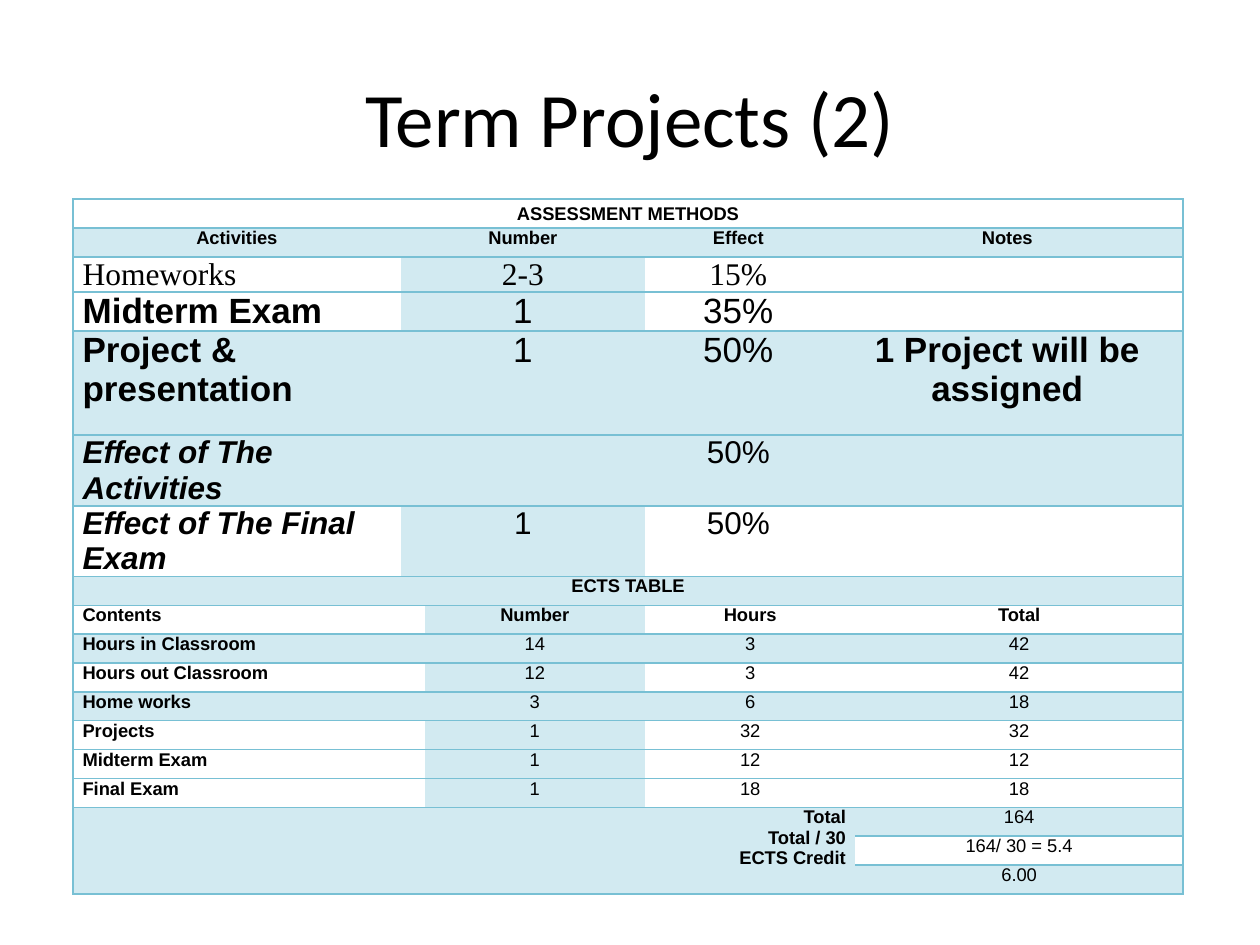
from dataclasses import dataclass
from typing import Optional

from lxml import etree
from pptx import Presentation
from pptx.dml.color import RGBColor
from pptx.enum.text import MSO_ANCHOR, PP_ALIGN
from pptx.oxml.ns import qn
from pptx.util import Pt

LEFT, MID, RIGHT = PP_ALIGN.LEFT, PP_ALIGN.CENTER, PP_ALIGN.RIGHT
TOP, CENTER = MSO_ANCHOR.TOP, MSO_ANCHOR.MIDDLE
PLAIN_STYLE = "{2D5ABB26-0587-4C30-8999-92F81FD0307C}"  # no style, no grid


@dataclass(frozen=True)
class Theme:
    ink: str = "000000"
    band: str = "D2EAF1"
    rule: str = "78C0D4"
    sans: str = "Arial"
    serif: str = "Times New Roman"
    head: str = "Calibri"
    title: float = 44
    small: float = 10.5
    mid: float = 18
    large: float = 20


THEME = Theme()


@dataclass(frozen=True)
class Look:
    size: float
    bold: bool = False
    italic: bool = False
    face: str = THEME.sans
    align: PP_ALIGN = MID


@dataclass(frozen=True)
class Row:
    grid: tuple  # first and last column of each cell
    band: bool
    texts: tuple
    lead: Look  # look of the first cell
    rest: Optional[Look] = None
    tail: Optional[Look] = None  # look of the last cell, if it differs
    deep: int = 1  # rows taken by the first cell


# Column spans
WHOLE = ((0, 5),)
UPPER = ((0, 0), (1, 2), (3, 3), (4, 5))
LOWER = ((0, 1), (2, 2), (3, 4), (5, 5))
SUMS = ((0, 4), (5, 5))
LAST = ((5, 5),)

# Text looks
HEAD = Look(THEME.small, bold=True)
NAME = Look(THEME.small, bold=True, align=LEFT)
SUM = Look(THEME.small, bold=True, align=RIGHT)
CELL = Look(THEME.small)
SERIF = Look(THEME.mid, face=THEME.serif)
TASK = Look(THEME.mid, face=THEME.serif, align=LEFT)
BIG = Look(THEME.large)
LABEL = Look(THEME.large, bold=True, align=LEFT)
NOTE = Look(THEME.large, bold=True)
MEAN = Look(THEME.mid)
SHARE = Look(THEME.mid, bold=True, italic=True, align=LEFT)

ROWS = (
    Row(WHOLE, False, ("ASSESSMENT METHODS",), HEAD),
    Row(UPPER, True, ("Activities", "Number", "Effect", "Notes"), HEAD, HEAD),
    Row(UPPER, False, ("Homeworks", "2-3", "15%", ""), TASK, SERIF),
    Row(UPPER, False, ("Midterm Exam", "1", "35%", ""), LABEL, BIG),
    Row(UPPER, True, ("Project & presentation", "1", "50%",
                      "1 Project will be assigned"), LABEL, BIG, NOTE),
    Row(UPPER, True, ("Effect of The Activities", "", "50%", ""), SHARE, MEAN),
    Row(UPPER, False, ("Effect of The Final Exam", "1", "50%", ""), SHARE, MEAN),
    Row(WHOLE, True, ("ECTS TABLE",), HEAD),
    Row(LOWER, False, ("Contents", "Number", "Hours", "Total"), NAME, HEAD),
    Row(LOWER, True, ("Hours in Classroom", "14", "3", "42"), NAME, CELL),
    Row(LOWER, False, ("Hours out Classroom", "12", "3", "42"), NAME, CELL),
    Row(LOWER, True, ("Home works", "3", "6", "18"), NAME, CELL),
    Row(LOWER, False, ("Projects", "1", "32", "32"), NAME, CELL),
    Row(LOWER, False, ("Midterm Exam", "1", "12", "12"), NAME, CELL),
    Row(LOWER, False, ("Final Exam", "1", "18", "18"), NAME, CELL),
    Row(SUMS, True, ("Total\nTotal / 30\nECTS Credit", "164"), SUM, CELL, deep=3),
    Row(LAST, False, ("164/ 30 = 5.4",), CELL),
    Row(LAST, True, ("6.00",), CELL),
)
WIDTHS = (187.2, 8.64, 126, 106.56, 8.64, 187.2)
HEIGHT, TALL, TALL_ROW = 16.5, 59.6, 4


def edge(cell, sides: str) -> None:
    """Rule the given sides of a cell and clear the others."""
    props = cell._tc.get_or_add_tcPr()
    for side in "LRTB":
        line = etree.SubElement(props, qn("a:ln" + side), w=str(Pt(1)))
        if side in sides:
            fill = etree.SubElement(line, qn("a:solidFill"))
            etree.SubElement(fill, qn("a:srgbClr"), val=THEME.rule)
        else:
            etree.SubElement(line, qn("a:noFill"))


def style(font, look: Look) -> None:
    font.size, font.name = Pt(look.size), look.face
    font.bold, font.italic = look.bold, look.italic
    font.color.rgb = RGBColor.from_string(THEME.ink)


def write(cell, text: str, look: Look) -> None:
    cell.text_frame.text = text
    for para in cell.text_frame.paragraphs:
        para.alignment = look.align
        for run in para.runs:
            style(run.font, look)


def reset(cell) -> None:
    """Trim the margins and keep an empty cell from stretching its row."""
    cell.margin_left = cell.margin_right = Pt(5.4)
    cell.margin_top = cell.margin_bottom = 0
    cell.vertical_anchor = TOP
    para = cell.text_frame.paragraphs[0]
    if not para.runs:
        end = para._p.get_or_add_endParaRPr()
        end.set("sz", str(int(THEME.small * 100)))


def draw_row(table, top: int, row: Row) -> None:
    final = len(row.grid) - 1
    for spot, ((first, last), text) in enumerate(zip(row.grid, row.texts)):
        deep = row.deep if spot == 0 else 1
        look = row.lead if spot == 0 else row.rest
        if spot == final and row.tail:
            look = row.tail
        base = top + deep - 1
        # The number column is always shaded
        shade = row.band or (spot == 1 and len(row.grid) == 4)
        for line in range(top, base + 1):
            for col in range(first, last + 1):
                cell = table.cell(line, col)
                start = (line, col) == (top, first)
                sides = "T" if line == top else ""
                sides += "B" if line == base or start else ""
                sides += "L" if col == 0 else ""
                sides += "R" if col == 5 or (start and last == 5) else ""
                edge(cell, sides)
                if shade:
                    cell.fill.solid()
                    cell.fill.fore_color.rgb = RGBColor.from_string(THEME.band)
                else:
                    cell.fill.background()
        cell = table.cell(top, first)
        if (base, last) != (top, first):
            cell.merge(table.cell(base, last))
        write(cell, text, look)


def draw_table(slide) -> None:
    frame = slide.shapes.add_table(
        len(ROWS), len(WIDTHS), Pt(41.8), Pt(113.8), Pt(sum(WIDTHS)),
        Pt(HEIGHT * (len(ROWS) - 1) + TALL))
    table = frame.table
    table.first_row = table.horz_banding = False
    table._tbl.tblPr.find(qn("a:tableStyleId")).text = PLAIN_STYLE
    for col, width in zip(table.columns, WIDTHS):
        col.width = Pt(width)
    for spot, line in enumerate(table.rows):
        line.height = Pt(TALL if spot == TALL_ROW else HEIGHT)
    for top, row in enumerate(ROWS):
        draw_row(table, top, row)
    for cell in table.iter_cells():
        reset(cell)
    table.cell(0, 0).vertical_anchor = CENTER


def draw_title(slide) -> None:
    title = slide.shapes.title
    title.left, title.top = Pt(36), Pt(21.6)
    title.width, title.height = Pt(648), Pt(90)
    frame = title.text_frame
    frame.text = "Term Projects (2)"
    frame.vertical_anchor = CENTER
    frame.paragraphs[0].alignment = MID
    style(frame.paragraphs[0].runs[0].font, Look(THEME.title, face=THEME.head))


def main() -> None:
    deck = Presentation()
    deck.slide_width, deck.slide_height = Pt(720), Pt(540)
    slide = deck.slides.add_slide(deck.slide_layouts[5])
    draw_title(slide)
    draw_table(slide)
    deck.save("out.pptx")


if __name__ == "__main__":
    main()
